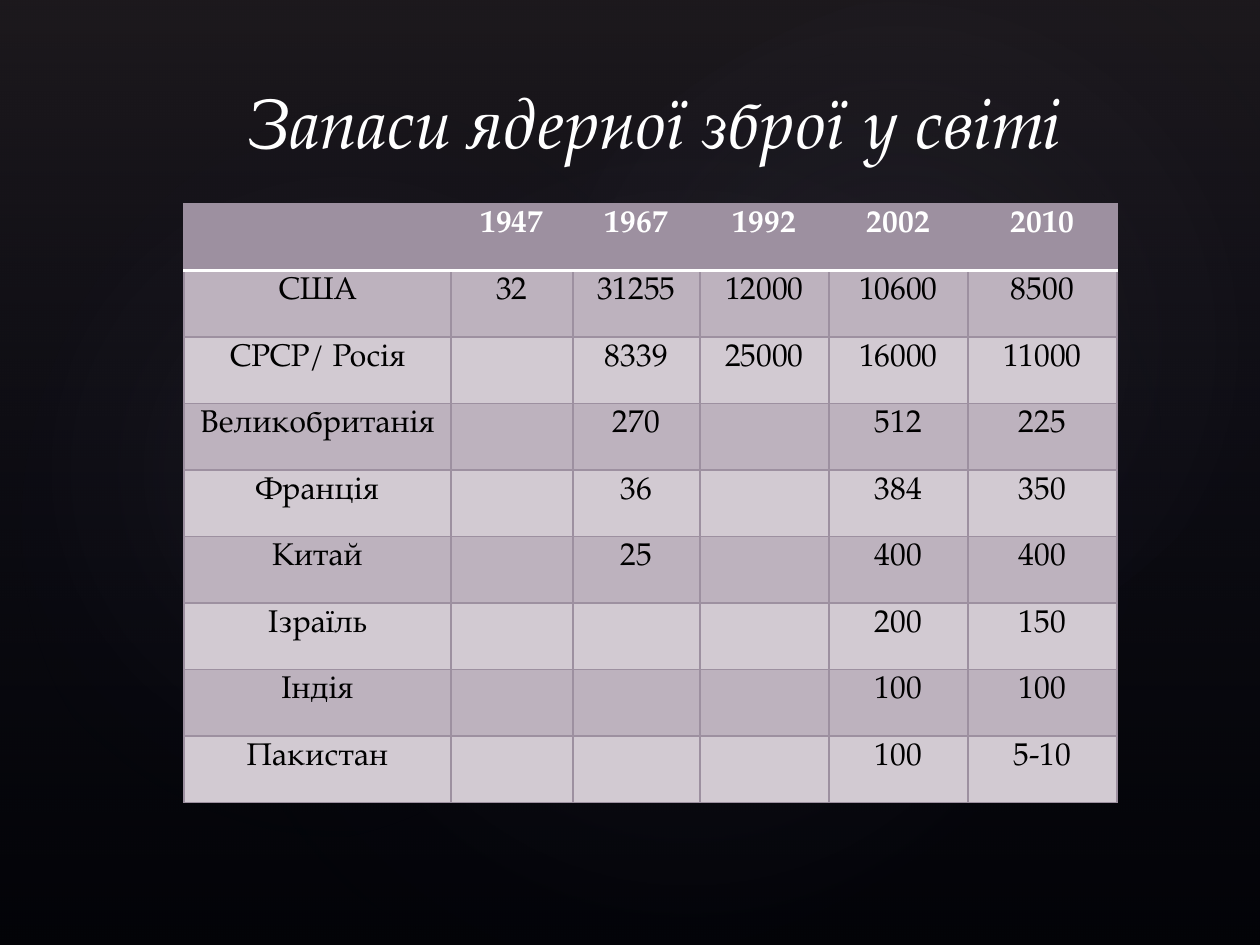
from lxml import etree
from pptx import Presentation
from pptx.dml.color import RGBColor
from pptx.enum.shapes import MSO_SHAPE
from pptx.enum.text import MSO_ANCHOR, PP_ALIGN
from pptx.oxml import parse_xml
from pptx.oxml.ns import nsdecls, qn
from pptx.util import Emu, Pt

RECT, OVAL = MSO_SHAPE.RECTANGLE, MSO_SHAPE.OVAL
BOTTOM = MSO_ANCHOR.BOTTOM
CENTER = PP_ALIGN.CENTER
EMU_PER_PX = 914400 / 126
FONT = "TeX Gyre Pagella"
COLORS = {
    "black": "000000",
    "white": "FFFFFF",
    "mauve": "9D90A0",
    "band_dark": "BDB2BE",
    "band_light": "D2CAD2",
    "plum": "504652",
    "navy": "242852",
    "glow": "C4BCC6",
}
LINEAR = '<a:lin ang="5400000" scaled="0"/>'
RADIAL = '<a:path path="circle"><a:fillToRect l="50000" t="50000" r="50000" b="50000"/></a:path>'

GLOWS = [
    (189, 144, 998, 786, 328.7, 7),
    (-38, 161, 764, 617, 294.3, 8),
    (451, 16, 893, 655, 328.7, 8),
]
COLUMNS = [267, 122, 127, 129, 139, 149]
STOCKPILES = [
    ["", "1947", "1967", "1992", "2002", "2010"],
    ["США", "32", "31255", "12000", "10600", "8500"],
    ["СРСР/ Росія", "", "8339", "25000", "16000", "11000"],
    ["Великобританія", "", "270", "", "512", "225"],
    ["Франція", "", "36", "", "384", "350"],
    ["Китай", "", "25", "", "400", "400"],
    ["Ізраїль", "", "", "", "200", "150"],
    ["Індія", "", "", "", "100", "100"],
    ["Пакистан", "", "", "", "100", "5-10"],
]


def px(n):
    return Emu(round(n * EMU_PER_PX))


def rgb(name):
    return RGBColor.from_string(COLORS[name])


class Deck:
    def __init__(self, prs):
        self.s = prs.slides.add_slide(prs.slide_layouts[6])

    def background(self, color):
        fill = self.s.background.fill
        fill.solid()
        fill.fore_color.rgb = rgb(color)

    def gradient(self, kind, x, y, w, h, stops, direction, rotation=0):
        sp = self.s.shapes.add_shape(kind, px(x), px(y), px(w), px(h))
        sp.shadow.inherit = False
        sp.rotation = rotation
        sp.line.fill.background()
        sp.fill.background()
        marks = "".join(
            f'<a:gs pos="{pos * 1000}"><a:srgbClr val="{COLORS[color]}">'
            f'<a:alpha val="{alpha * 1000}"/></a:srgbClr></a:gs>'
            for pos, color, alpha in stops
        )
        spPr = sp._element.spPr
        spPr.replace(spPr.find(qn("a:noFill")), parse_xml(
            f'<a:gradFill {nsdecls("a")} rotWithShape="1">'
            f'<a:gsLst>{marks}</a:gsLst>{direction}</a:gradFill>'))

    def run(self, p, text, size, color, bold=False, italic=False):
        p.alignment = CENTER
        r = p.add_run()
        r.text = text
        r.font.name = FONT
        r.font.size = Pt(size)
        r.font.color.rgb = rgb(color)
        r.font.bold = bold
        r.font.italic = italic

    def title(self, x, y, w, h, text):
        tf = self.s.shapes.add_textbox(px(x), px(y), px(w), px(h)).text_frame
        tf.word_wrap = True
        tf.vertical_anchor = BOTTOM
        tf.margin_bottom = 0
        self.run(tf.paragraphs[0], text, 40, "white", italic=True)

    def border(self, cell, side, color, width):
        tcPr = cell._tc.get_or_add_tcPr()
        ln = etree.SubElement(tcPr, qn(f"a:ln{side}"), w=str(Pt(width)))
        fill = etree.SubElement(ln, qn("a:solidFill"))
        etree.SubElement(fill, qn("a:srgbClr"), val=COLORS[color])

    def table(self, x, y, h, columns, rows):
        table = self.s.shapes.add_table(
            len(rows), len(columns), px(x), px(y), px(sum(columns)), px(h)).table
        for column, width in zip(table.columns, columns):
            column.width = px(width)
        for i, row in enumerate(rows):
            header = i == 0
            band = "mauve" if header else "band_dark" if i % 2 else "band_light"
            for j, text in enumerate(row):
                cell = table.cell(i, j)
                for side in "LRTB":
                    rule = (i, side) in ((0, "B"), (1, "T"))
                    self.border(cell, side, *(("white", 1.5) if rule else ("mauve", 1)))
                cell.fill.solid()
                cell.fill.fore_color.rgb = rgb(band)
                if text:
                    self.run(cell.text_frame.paragraphs[0], text, 18,
                             "white" if header else "black", bold=header)


def main():
    prs = Presentation()
    prs.slide_width, prs.slide_height = px(1260), px(945)
    deck = Deck(prs)
    deck.background("black")
    deck.gradient(RECT, 0, 0, 1260, 945, [(0, "plum", 36), (100, "navy", 10)], LINEAR)
    for x, y, w, h, rotation, alpha in GLOWS:
        deck.gradient(OVAL, x, y, w, h, [(0, "glow", alpha), (58, "navy", 0)], RADIAL, rotation)
    deck.table(184, 204, 599, COLUMNS, STOCKPILES)
    deck.title(134, 37, 1040, 126, "Запаси ядерної зброї у світі")
    prs.save("out.pptx")


if __name__ == "__main__":
    main()
